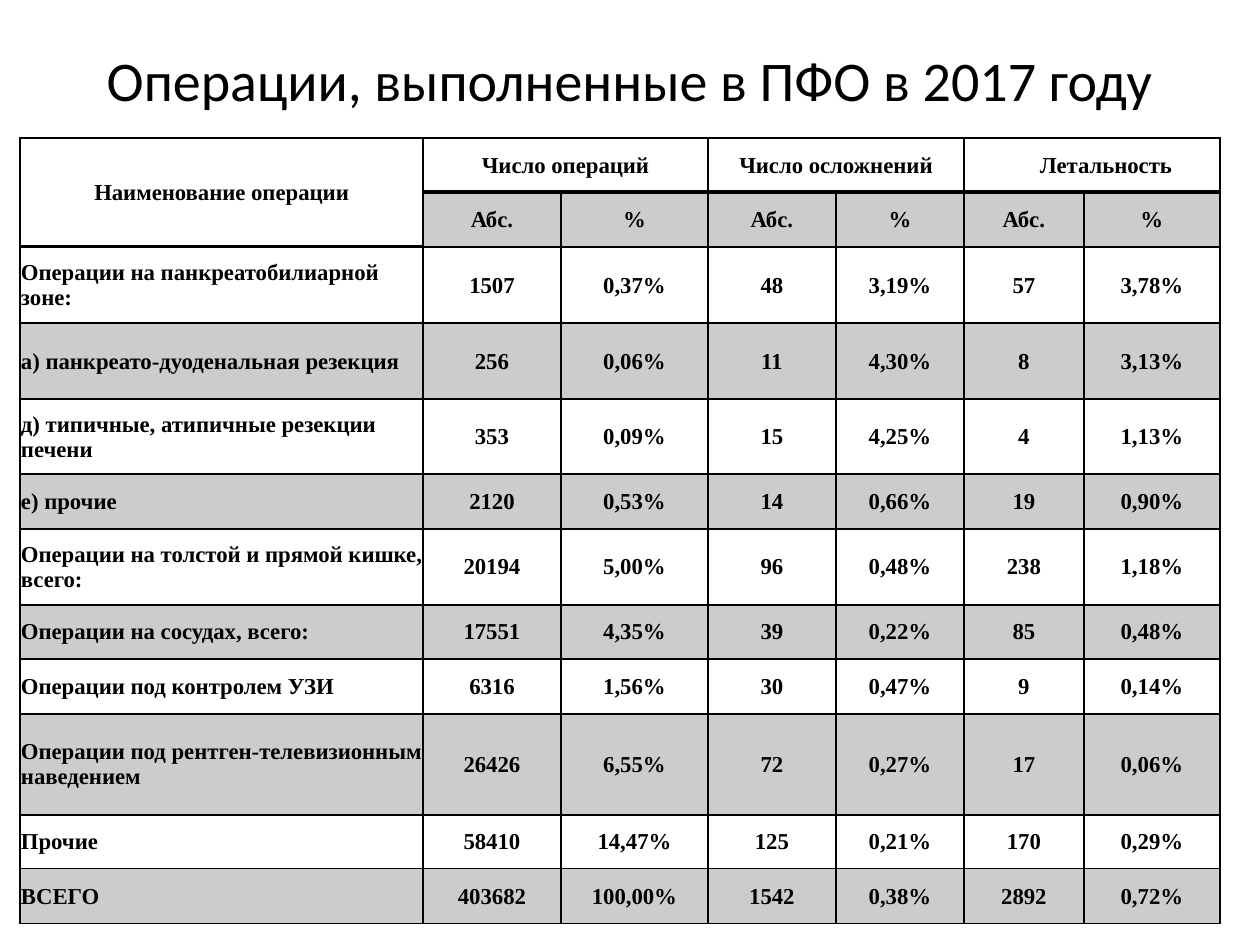
from collections import namedtuple
from lxml.etree import SubElement
from pptx import Presentation
from pptx.dml.color import RGBColor
from pptx.enum.text import MSO_ANCHOR, MSO_AUTO_SIZE, PP_ALIGN
from pptx.oxml.ns import qn
from pptx.util import Emu, Pt

Theme = namedtuple("Theme", "ink shade_alpha title_font title_size table_font table_size thin thick")
theme = Theme("000000", 20, "Calibri", 32, "Times New Roman", 13, 1, 2)


def px(length):
    return Emu(round(length * 914400 / 126))


def write_text(target, text, *, font, size, bold=False, align=PP_ALIGN.CENTER):
    paragraph = target.text_frame.paragraphs[0]
    paragraph.alignment = align
    run = paragraph.add_run()
    run.text = text
    run.font.name = font
    run.font.size = Pt(size)
    run.font.bold = bold
    run.font.color.rgb = RGBColor.from_string(theme.ink)


headings = ["Число операций", "Число осложнений", "Летальность"]
rows = [
    ["Наименование операции"] + [text for heading in headings for text in (heading, "")],
    [""] + ["Абс.", "%"] * len(headings),
    ["Операции на панкреатобилиарной зоне:", "1507", "0,37%", "48", "3,19%", "57", "3,78%"],
    ["а) панкреато-дуоденальная резекция", "256", "0,06%", "11", "4,30%", "8", "3,13%"],
    ["д) типичные, атипичные резекции печени", "353", "0,09%", "15", "4,25%", "4", "1,13%"],
    ["е) прочие", "2120", "0,53%", "14", "0,66%", "19", "0,90%"],
    ["Операции на толстой и прямой кишке, всего:", "20194", "5,00%", "96", "0,48%", "238", "1,18%"],
    ["Операции на сосудах, всего:", "17551", "4,35%", "39", "0,22%", "85", "0,48%"],
    ["Операции под контролем УЗИ", "6316", "1,56%", "30", "0,47%", "9", "0,14%"],
    ["Операции под рентген-телевизионным наведением", "26426", "6,55%", "72", "0,27%", "17", "0,06%"],
    ["Прочие", "58410", "14,47%", "125", "0,21%", "170", "0,29%"],
    ["ВСЕГО", "403682", "100,00%", "1542", "0,38%", "2892", "0,72%"],
]
column_widths = [403, 138, 147, 128, 128, 120, 136]
row_heights = [54, 55, 76, 76, 75, 55, 76, 54, 55, 101, 54, 55]

presentation = Presentation()
presentation.slide_width = px(1260)
presentation.slide_height = px(945)
slide = presentation.slides.add_slide(presentation.slide_layouts[5])

title = slide.shapes.title
title.left, title.top, title.width, title.height = px(63), px(20), px(1134), px(118)
title.text_frame.auto_size = MSO_AUTO_SIZE.NONE
title.text_frame.vertical_anchor = MSO_ANCHOR.MIDDLE
write_text(title, "Операции, выполненные в ПФО в 2017 году", font=theme.title_font, size=theme.title_size)

table = slide.shapes.add_table(
    len(rows), len(column_widths), px(20), px(138), px(sum(column_widths)), px(sum(row_heights))
).table
table.first_row = False
table.horz_banding = False
for column, width in zip(table.columns, column_widths):
    column.width = px(width)
for row, height in zip(table.rows, row_heights):
    row.height = px(height)

table.cell(0, 0).merge(table.cell(1, 0))
for column_index in range(1, len(column_widths), 2):
    table.cell(0, column_index).merge(table.cell(0, column_index + 1))

for row_index, values in enumerate(rows):
    for column_index, text in enumerate(values):
        cell = table.cell(row_index, column_index)
        cell.vertical_anchor = MSO_ANCHOR.MIDDLE
        cell.margin_left = px(29) if text == "Летальность" else px(1)
        cell.margin_right = cell.margin_top = px(1)
        cell.margin_bottom = 0

        header_end = 1 if column_index == 0 else 0
        thick_sides = []
        if row_index <= header_end:
            thick_sides.append("lnB")
        if row_index == header_end + 1:
            thick_sides.append("lnT")
        properties = cell._tc.get_or_add_tcPr()
        for side in ("lnL", "lnR", "lnT", "lnB"):
            weight = theme.thick if side in thick_sides else theme.thin
            line = SubElement(properties, qn(f"a:{side}"), w=str(Pt(weight)))
            line_fill = SubElement(line, qn("a:solidFill"))
            SubElement(line_fill, qn("a:srgbClr"), val=theme.ink)

        if row_index % 2 and not cell.is_spanned:
            cell.fill.solid()
            cell.fill.fore_color.rgb = RGBColor.from_string(theme.ink)
            shade = properties.find(qn("a:solidFill")).find(qn("a:srgbClr"))
            SubElement(shade, qn("a:alpha"), val=str(theme.shade_alpha * 1000))
        else:
            cell.fill.background()

        if text:
            is_label = column_index == 0 and row_index > 1
            align = PP_ALIGN.LEFT if is_label else PP_ALIGN.CENTER
            write_text(cell, text, font=theme.table_font, size=theme.table_size, bold=True, align=align)

presentation.save("out.pptx")
